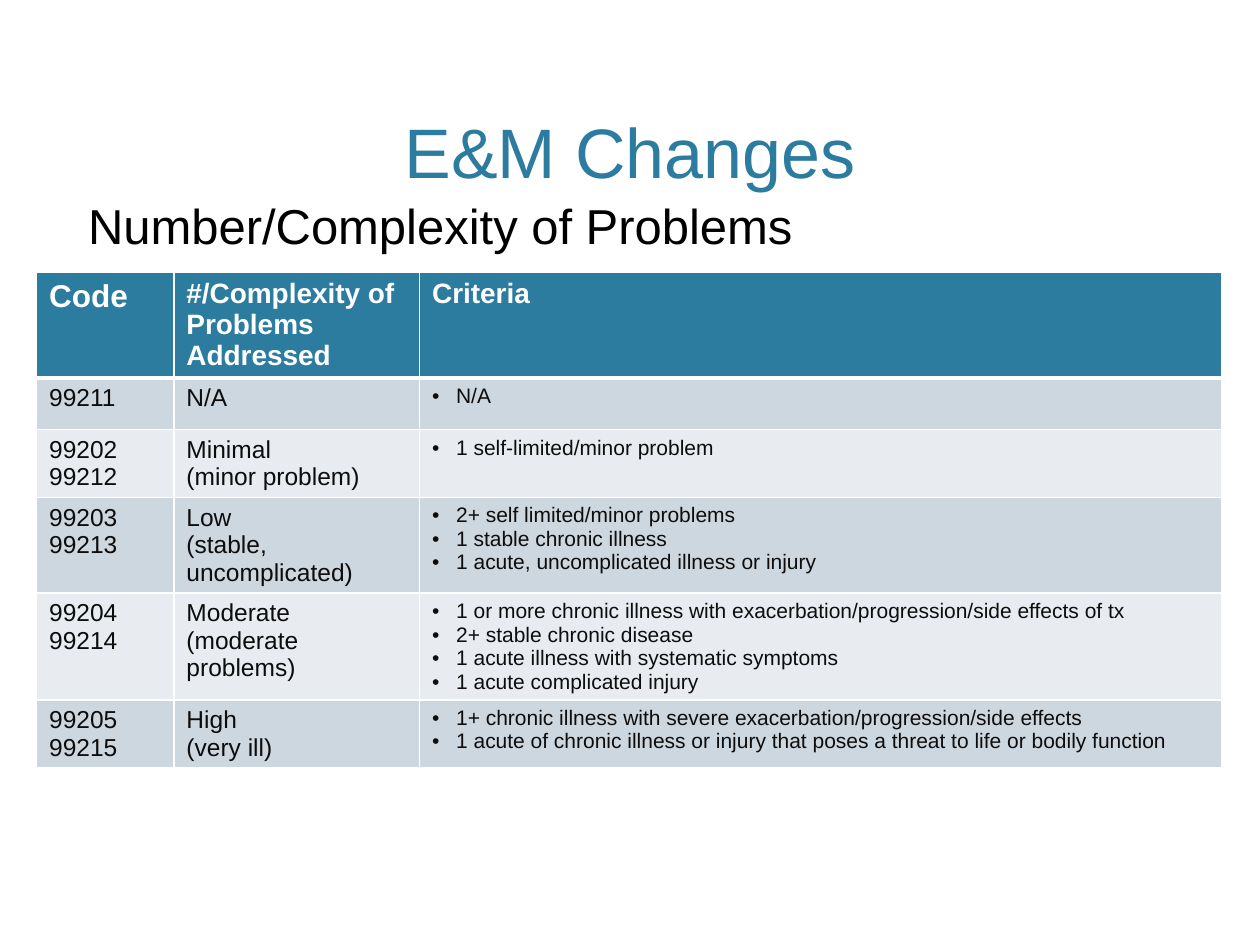
"""Build the E&M Changes slide with its table of problem complexity."""
from lxml import etree
from pptx import Presentation
from pptx import util as u
from pptx.dml.color import RGBColor
from pptx.enum import text
from pptx.oxml import ns

COLORS = {"teal": "2C7C9F", "white": "FFFFFF", "black": "000000",
          "ink": "0D0D0D", "dark_band": "CDD7DF", "light_band": "E8ECF0"}


def write(frame, lines, size, color, bold=False, bullet=False, align=text.PP_ALIGN.LEFT):
    for index, line in enumerate(lines):
        para = frame.paragraphs[0] if index == 0 else frame.add_paragraph()
        para.alignment = align
        if bullet:
            props = para._p.get_or_add_pPr()
            props.set("marL", str(u.Inches(0.19)))
            props.set("indent", str(u.Inches(-0.19)))
            etree.SubElement(props, ns.qn("a:buFont"), typeface="Arial")
            etree.SubElement(props, ns.qn("a:buChar"), char="•")
        span = para.add_run()
        span.text = line
        span.font.name = "Arial"
        span.font.size = u.Pt(size)
        span.font.bold = bold
        span.font.color.rgb = RGBColor.from_string(COLORS[color])


def add_borders(cell, widths):
    props = cell._tc.get_or_add_tcPr()
    for side, width in widths.items():
        line = etree.SubElement(props, ns.qn(f"a:ln{side}"), w=str(u.Pt(width)))
        fill = etree.SubElement(line, ns.qn("a:solidFill"))
        etree.SubElement(fill, ns.qn("a:srgbClr"), val=COLORS["white"])


deck = Presentation()
deck.slide_width, deck.slide_height = u.Inches(10), u.Inches(7.5)
page = deck.slides.add_slide(deck.slide_layouts[5])

title = page.shapes.title
title.left, title.top = u.Inches(0.6), u.Inches(0.12)
title.width, title.height = u.Inches(8.8), u.Inches(1.46)
title.text_frame.vertical_anchor = text.MSO_ANCHOR.BOTTOM
title.text_frame.auto_size = text.MSO_AUTO_SIZE.NONE
write(title.text_frame, ["E&M Changes"], 40, "teal", align=text.PP_ALIGN.CENTER)

headers = ["Code", "#/Complexity of Problems Addressed", "Criteria"]
levels = [
    (["99211"], ["N/A"], ["N/A"]),
    (["99202", "99212"], ["Minimal", "(minor problem)"], ["1 self-limited/minor problem"]),
    (["99203", "99213"], ["Low", "(stable, uncomplicated)"],
     ["2+ self limited/minor problems", "1 stable chronic illness",
      "1 acute, uncomplicated illness or injury"]),
    (["99204", "99214"], ["Moderate", "(moderate problems)"],
     ["1 or more chronic illness with exacerbation/progression/side effects of tx",
      "2+ stable chronic disease", "1 acute illness with systematic symptoms",
      "1 acute complicated injury"]),
    (["99205", "99215"], ["High", "(very ill)"],
     ["1+ chronic illness with severe exacerbation/progression/side effects",
      "1 acute of chronic illness or injury that poses a threat to life or bodily function"]),
]
column_widths = [1.09, 1.95, 6.37]
row_heights = [0.83, 0.41, 0.53, 0.76, 0.84, 0.53]

table = page.shapes.add_table(
    len(row_heights), len(column_widths), u.Inches(0.29), u.Inches(2.16),
    u.Inches(sum(column_widths)), u.Inches(sum(row_heights))).table
for column, width in zip(table.columns, column_widths):
    column.width = u.Inches(width)
for row, height in zip(table.rows, row_heights):
    row.height = u.Inches(height)

for row_index, row in enumerate([[[header] for header in headers], *levels]):
    for column_index, lines in enumerate(row):
        cell = table.cell(row_index, column_index)
        is_header = row_index == 0
        add_borders(cell, {"L": 1, "R": 1, "T": 3 if row_index == 1 else 1,
                           "B": 3 if is_header else 1})
        band = "teal" if is_header else ("light_band", "dark_band")[row_index % 2]
        cell.fill.solid()
        cell.fill.fore_color.rgb = RGBColor.from_string(COLORS[band])
        if is_header:
            write(cell.text_frame, lines, 18 if column_index == 0 else 16, "white", bold=True)
        else:
            is_criteria = column_index == 2
            write(cell.text_frame, lines, 12 if is_criteria else 14, "ink", bullet=is_criteria)

box = page.shapes.add_textbox(u.Inches(0.6), u.Inches(1.5), u.Inches(8.22), u.Inches(0.57))
box.text_frame.word_wrap = True
box.text_frame.auto_size = text.MSO_AUTO_SIZE.SHAPE_TO_FIT_TEXT
write(box.text_frame, ["Number/Complexity of Problems"], 28, "black")

deck.save("out.pptx")
